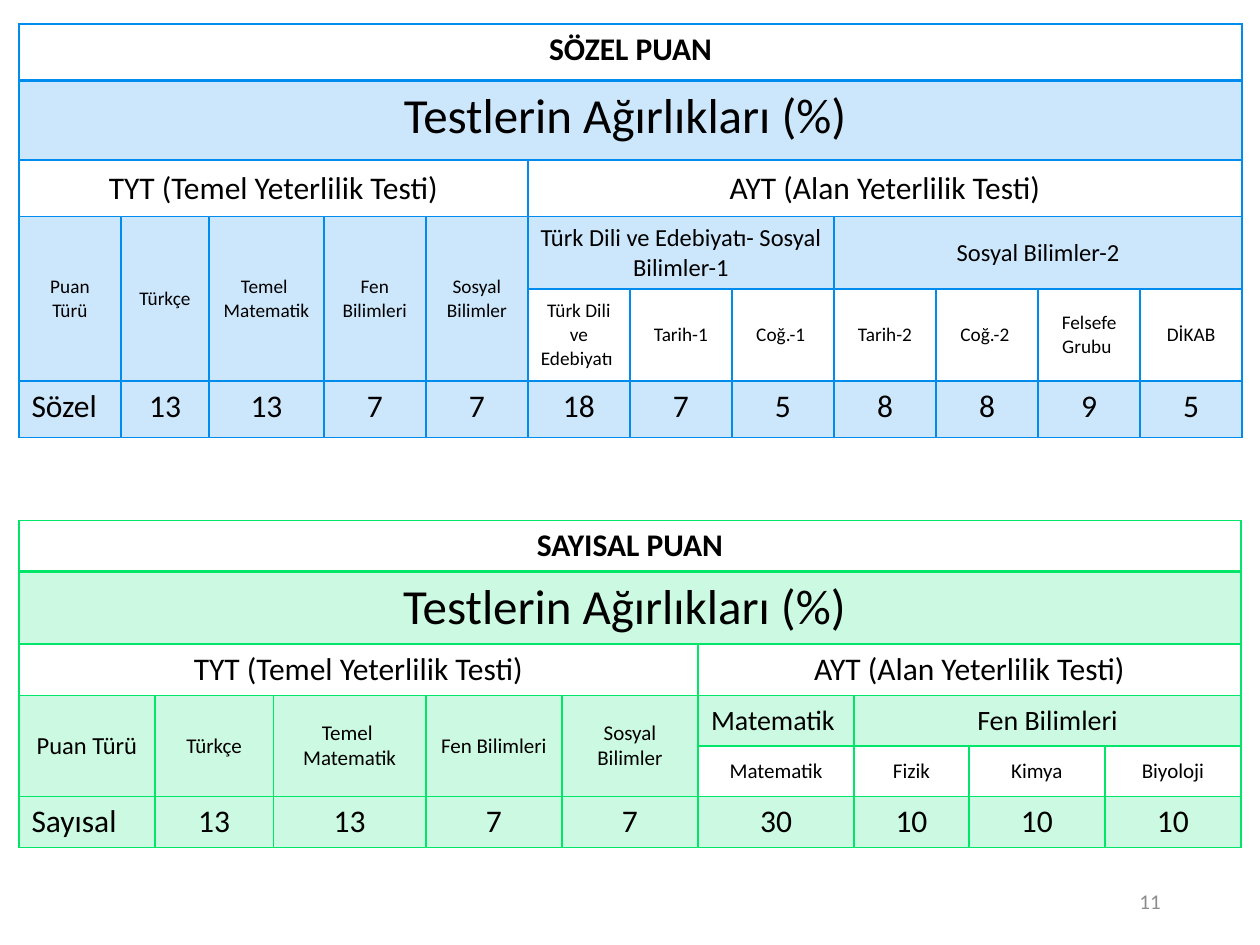
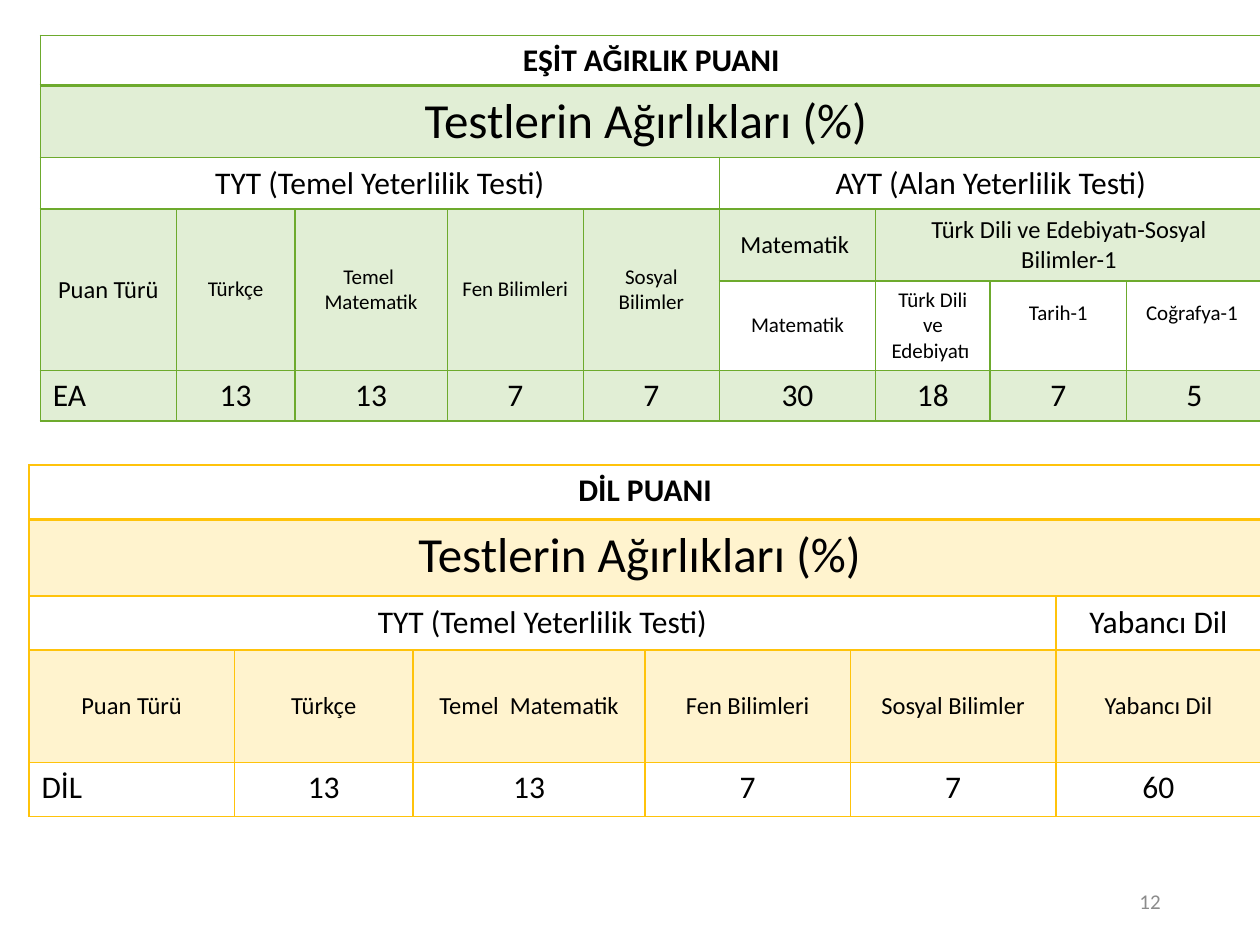
"""Build two slides of exam score weight tables."""
from dataclasses import dataclass

from lxml import etree
from pptx import Presentation
from pptx.dml.color import RGBColor
from pptx.enum.text import MSO_ANCHOR, PP_ALIGN
from pptx.oxml.ns import qn
from pptx.util import Inches, Pt

LEFT, CENTER, RIGHT = PP_ALIGN.LEFT, PP_ALIGN.CENTER, PP_ALIGN.RIGHT
TOP, MIDDLE = MSO_ANCHOR.TOP, MSO_ANCHOR.MIDDLE
FONT = "Calibri"
BLACK, GRAY = "000000", "8C8C8C"
BLUE, MINT, GREEN, GOLD = "008BEF", "01E569", "6DAA2D", "FFC30B"
TINT = 20
WEIGHTS = "Testlerin Ağırlıkları (%) "
TYT = "TYT (Temel Yeterlilik Testi)"
AYT = "AYT (Alan Yeterlilik Testi)"
HEADS = ["Puan Türü", "Türkçe", "Temel  Matematik", "Fen Bilimleri", "Sosyal Bilimler"]
BASE = len(HEADS)
NINE = [1.08, 0.94, 1.21, 1.08, 1.08, 1.24, 0.91, 1.08, 1.08]


@dataclass
class Score:
    """Content and measures of one score table."""
    title: str
    hue: str
    spot: tuple
    cols: list
    rows: list
    field: str
    groups: list
    tests: list
    points: list
    sizes: tuple
    shaded: bool = True


SOZEL = Score(
    "SÖZEL PUAN", BLUE, (0.15, 0.19), [0.81, 0.7, 0.91] + [0.81] * 9,
    [0.45, 0.63, 0.45, 0.57, 0.73, 0.45], AYT,
    [("Türk Dili ve Edebiyatı- Sosyal Bilimler-1", 3), ("Sosyal Bilimler-2", 4)],
    ["Türk Dili ve Edebiyatı ", "Tarih-1", "Coğ.-1 ", "Tarih-2", "Coğ.-2 ",
     "Felsefe Grubu ", "DİKAB"],
    ["Sözel", 13, 13, 7, 7, 18, 7, 5, 8, 8, 9, 5], (11, 11, 14, 11))

SAYISAL = Score(
    "SAYISAL PUAN", MINT, (0.15, 4.13), NINE,
    [0.4, 0.57, 0.41, 0.4, 0.4, 0.4], AYT,
    [("Matematik ", 1), ("Fen Bilimleri", 3)],
    ["Matematik", "Fizik", "Kimya", "Biyoloji"],
    ["Sayısal", 13, 13, 7, 7, 30, 10, 10, 10], (14, 12, 16, 12))

EA = Score(
    "EŞİT AĞIRLIK PUANI", GREEN, (0.32, 0.28), NINE,
    [0.4, 0.57, 0.41, 0.57, 0.71, 0.4], AYT,
    [("Matematik ", 1), ("Türk Dili ve Edebiyatı-Sosyal Bilimler-1", 3)],
    ["Matematik", "Türk Dili ve Edebiyatı ", "Tarih-1", "Coğrafya-1 "],
    ["EA", 13, 13, 7, 7, 30, 18, 7, 5], (14, 12, 14, 12))

DIL = Score(
    "DİL PUANI", GOLD, (0.23, 3.69), [1.63, 1.42, 1.84, 1.63, 1.63, 1.63],
    [0.43, 0.61, 0.43, 0.89, 0.43], "Yabancı Dil",
    [("Yabancı Dil", 1)], [],
    ["DİL", 13, 13, 7, 7, 60], (14, 14, 14, 14), False)


def color(code):
    """Turn a hex string into a colour."""
    return RGBColor.from_string(code)


def write(frame, text, size, align, hue=BLACK, bold=False):
    """Put one formatted paragraph into a text frame."""
    frame.word_wrap = True
    frame.text = text
    para = frame.paragraphs[0]
    para.alignment = align
    font = para.runs[0].font
    font.name, font.size, font.bold = FONT, Pt(size), bold
    font.color.rgb = color(hue)


def edge(cell, hue, top, bottom):
    """Draw the four borders of a cell, widths in points."""
    props = cell._tc.get_or_add_tcPr()
    for side, width in zip("LRTB", (1, 1, top, bottom)):
        line = etree.SubElement(props, qn(f"a:ln{side}"), w=str(Pt(width)))
        fill = etree.SubElement(line, qn("a:solidFill"))
        etree.SubElement(fill, qn("a:srgbClr"), val=hue)


def shade(cell, hue):
    """Fill a cell with a light tint of the hue."""
    cell.fill.solid()
    cell.fill.fore_color.rgb = color(hue)
    tone = cell._tc.tcPr.find(qn("a:solidFill"))[0]
    etree.SubElement(tone, qn("a:alpha"), val=str(TINT * 1000))


def style(table, score):
    """Set borders and fills of every cell."""
    last = len(score.rows) - 1
    tinted = {1, 3} | ({last} if score.shaded else set())
    for r in range(last + 1):
        for c in range(len(score.cols)):
            cell = table.cell(r, c)
            edge(cell, score.hue, 2 if r == 1 else 1, 2 if r == 0 else 1)
            if r in tinted or (r == 4 and score.tests and c < BASE):
                shade(cell, score.hue)
            else:
                cell.fill.background()


def put(table, row, col, text, size, wide=1, tall=1, anchor=MIDDLE, align=CENTER, bold=False):
    """Write a cell, merged over the given span."""
    cell = table.cell(row, col)
    if wide * tall > 1:
        cell.merge(table.cell(row + tall - 1, col + wide - 1))
    cell.vertical_anchor = anchor
    write(cell.text_frame, text, size, align, bold=bold)


def grid(slide, score):
    """Add an empty table with its column and row sizes."""
    x, y = score.spot
    table = slide.shapes.add_table(
        len(score.rows), len(score.cols), Inches(x), Inches(y),
        Inches(sum(score.cols)), Inches(sum(score.rows))).table
    table.first_row = table.horz_banding = False
    for col, width in zip(table.columns, score.cols):
        col.width = Inches(width)
    for row, height in zip(table.rows, score.rows):
        row.height = Inches(height)
    return table


def chart(slide, score):
    """Add one full score table."""
    table = grid(slide, score)
    style(table, score)
    count = len(score.cols)
    first, head, group, test = score.sizes
    put(table, 0, 0, score.title, 18, count, anchor=TOP, bold=True)
    put(table, 1, 0, WEIGHTS, 28, count, anchor=TOP)
    put(table, 2, 0, TYT, 18, BASE)
    put(table, 2, BASE, score.field, 18, count - BASE)
    for c, text in enumerate(HEADS):
        put(table, 3, c, text, head if c else first, tall=2 if score.tests else 1)
    col = BASE
    for text, wide in score.groups:
        put(table, 3, col, text, group, wide)
        col += wide
    for c, text in enumerate(score.tests, BASE):
        put(table, 4, c, text, test)
    for c, point in enumerate(score.points):
        put(table, len(score.rows) - 1, c, str(point), 18,
            anchor=TOP, align=CENTER if c else LEFT)
    return table


def folio(slide, number):
    """Add the page number."""
    box = slide.shapes.add_textbox(Inches(7.06), Inches(6.95), Inches(2.25), Inches(0.4))
    box.text_frame.vertical_anchor = MIDDLE
    write(box.text_frame, str(number), 12, RIGHT, GRAY)


def main():
    """Build and save the slides."""
    deck = Presentation()
    deck.slide_width, deck.slide_height = Inches(10), Inches(7.5)
    for number, scores in enumerate([(SOZEL, SAYISAL), (DIL, EA)], 11):
        slide = deck.slides.add_slide(deck.slide_layouts[6])
        for score in scores:
            table = chart(slide, score)
            if score is EA:
                for c in (7, 8):
                    table.cell(4, c).margin_bottom = Inches(0.25)
        folio(slide, number)
    deck.save("out.pptx")


if __name__ == "__main__":
    main()
